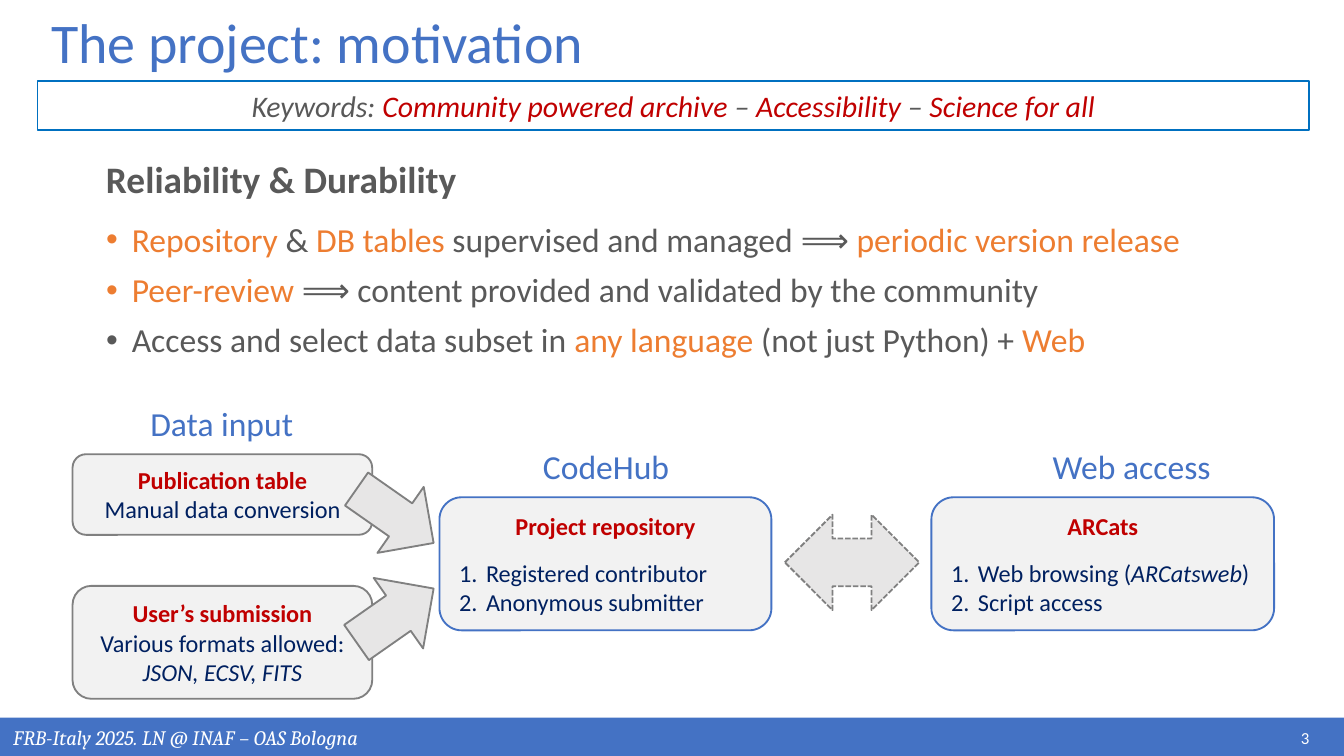
import pptx
import pptx.util
import pptx.dml.color
import pptx.enum.dml
import pptx.enum.shapes
import pptx.enum.text
import pptx.oxml
import pptx.oxml.ns

Inches, Pt = pptx.util.Inches, pptx.util.Pt
SHAPE = pptx.enum.shapes.MSO_SHAPE
ALIGN = pptx.enum.text.PP_ALIGN
ANCHOR = pptx.enum.text.MSO_ANCHOR

BLUE, NAVY, RED, ORANGE = "4472C4", "002060", "C00000", "ED7D31"
TEXT, GREY, PALE, ARROW, WHITE = "595959", "808080", "F2F2F2", "E7E6E6", "FFFFFF"


def color(value):
    return pptx.dml.color.RGBColor.from_string(value)


def place(shape, left, top, width, height):
    shape.left, shape.top = Inches(left), Inches(top)
    shape.width, shape.height = Inches(width), Inches(height)


def prepare(shape, anchor):
    frame = shape.text_frame
    frame.word_wrap = True
    frame.auto_size = pptx.enum.text.MSO_AUTO_SIZE.NONE
    frame.vertical_anchor = anchor
    return frame


def write(para, spans, size, align=ALIGN.LEFT, font="Calibri"):
    """Add runs given as (text, colour, style); style may hold b and i."""
    para.alignment = align
    for text, fill, style in spans:
        span = para.add_run()
        span.text = text
        span.font.name, span.font.size = font, Pt(size)
        span.font.bold, span.font.italic = "b" in style, "i" in style
        span.font.color.rgb = color(fill)


def set_bullet(para, indent, tag, **attributes):
    properties = para._p.get_or_add_pPr()
    properties.set("marL", str(Inches(indent)))
    properties.set("indent", str(-Inches(indent)))
    bullet = pptx.oxml.parse_xml(f'<a:{tag} {pptx.oxml.ns.nsdecls("a")}/>')
    for name, value in attributes.items():
        bullet.set(name, value)
    properties.append(bullet)


def add_figure(page, kind, left, top, width, height, fill=None, line=None):
    shape = page.shapes.add_shape(kind, 0, 0, 0, 0)
    place(shape, left, top, width, height)
    shape.shadow.inherit = False
    if fill:
        shape.fill.solid()
        shape.fill.fore_color.rgb = color(fill)
    else:
        shape.fill.background()
    if line:
        shape.line.color.rgb = color(line)
        shape.line.width = Pt(1)
    else:
        shape.line.fill.background()
    return shape


def add_label(page, left, top, width, height, spans, size,
              align=ALIGN.CENTER, anchor=ANCHOR.TOP):
    box = page.shapes.add_textbox(0, 0, 0, 0)
    place(box, left, top, width, height)
    para = prepare(box, anchor).paragraphs[0]
    write(para, spans, size, align)
    return para


def add_footer(page, left, top, width, height):
    bar = add_figure(page, SHAPE.RECTANGLE, left, top, width, height, BLUE)
    write(prepare(bar, ANCHOR.MIDDLE).paragraphs[0],
          [("FRB-Italy 2025. LN @ INAF – OAS Bologna", WHITE, "i")], 11, font="Cambria")
    add_label(page, left + width - 0.55, top + 0.05, 0.39, 0.2,
              [("3", WHITE, "")], 9, ALIGN.RIGHT, ANCHOR.MIDDLE)


def add_header(page, left, top, width):
    title = page.shapes.title
    place(title, left, top, width, 0.59)
    para = prepare(title, ANCHOR.TOP).paragraphs[0]
    para.line_spacing = 0.9
    write(para, [("The project: motivation", BLUE, "")], 30)

    # Keyword strip
    strip = add_figure(page, SHAPE.RECTANGLE, left, top + 0.54, width, 0.37, line="0070C0")
    write(prepare(strip, ANCHOR.TOP).paragraphs[0], [
        ("Keywords: ", TEXT, "i"), ("Community powered archive ", RED, "i"),
        ("– ", TEXT, "i"), ("Accessibility ", RED, "i"),
        ("–", TEXT, "i"), (" Science for all", RED, "i")], 16, ALIGN.CENTER)


def add_points(page, left, top, width):
    heading = add_label(page, left, top, 2.89, 0.4,
                        [("Reliability & Durability", TEXT, "b")], 20, ALIGN.LEFT)
    heading.line_spacing = 0.9
    heading.space_before = Pt(7.5)

    points = [
        [("Repository", ORANGE, ""), (" & ", TEXT, ""), ("DB tables", ORANGE, ""),
         (" supervised and managed ⟹ ", TEXT, ""), ("periodic version release", ORANGE, "")],
        [("Peer-review", ORANGE, ""),
         (" ⟹ content provided and validated by the community", TEXT, "")],
        [("Access and select data subset in ", TEXT, ""), ("any language", ORANGE, ""),
         (" (not just Python) + ", TEXT, ""), ("Web", ORANGE, "")],
    ]
    body = page.placeholders[1]
    place(body, left, top + 0.46, width, 1.14)
    frame = prepare(body, ANCHOR.TOP)
    for index, spans in enumerate(points):
        para = frame.add_paragraph() if index else frame.paragraphs[0]
        para.line_spacing = 0.9
        para.space_before = Pt(7.5)
        write(para, spans, 18)
        set_bullet(para, 0.19, "buChar", char="•")


def add_card(page, left, top, width, height, line, heading, lines, numbered=False):
    card = add_figure(page, SHAPE.ROUNDED_RECTANGLE, left, top, width, height, PALE, line)
    frame = prepare(card, ANCHOR.MIDDLE)
    write(frame.paragraphs[0], [(heading, RED, "b")], 13, ALIGN.CENTER)
    if numbered:
        frame.paragraphs[0].space_after = Pt(9.5)
    for spans in lines:
        para = frame.add_paragraph()
        write(para, [(text, NAVY, style) for text, style in spans], 13,
              ALIGN.LEFT if numbered else ALIGN.CENTER)
        if numbered:
            set_bullet(para, 0.2, "buAutoNum", type="arabicPeriod")


def add_workflow(page, left, top):
    def caption(x, y, text):
        add_label(page, left + x, top + y, 1.46, 0.4, [(text, BLUE, "")], 18)

    # Web access
    add_card(page, left + 6.39, top + 0.75, 2.55, 0.99, BLUE, "ARCats",
             [[("Web browsing (", ""), ("ARCatsweb", "i"), (")", "")],
              [("Script access", "")]], numbered=True)
    exchange = add_figure(page, SHAPE.LEFT_RIGHT_ARROW, left + 5.3, top + 0.88,
                          1, 0.71, ARROW, GREY)
    exchange.line.dash_style = pptx.enum.dml.MSO_LINE.SQUARE_DOT
    caption(7.15, 0.32, "Web access")

    # Data input, first source
    add_card(page, left, top + 0.43, 2.23, 0.6, GREY, "Publication table",
             [[("Manual data conversion", "")]])

    # Repository
    add_card(page, left + 2.73, top + 0.75, 2.47, 0.99, BLUE, "Project repository",
             [[("Registered contributor", "")], [("Anonymous submitter", "")]],
             numbered=True)
    caption(3.24, 0.32, "CodeHub")

    # Data input, second source and arrows to the repository
    add_card(page, left, top + 1.41, 2.23, 0.84, GREY, "User’s submission",
             [[("Various formats allowed:", "")], [("JSON, ECSV, FITS", "i")]])
    for y, height, angle in ((1.31, 0.64, 325), (0.59, 0.6, 35)):
        arrow = add_figure(page, SHAPE.RIGHT_ARROW, left + 2.05, top + y,
                           0.7, height, ARROW, GREY)
        arrow.rotation = angle
    caption(0.38, 0, "Data input")


def main():
    deck = pptx.Presentation()
    deck.slide_width = Inches(10)
    deck.slide_height = deck.slide_width * 9 // 16
    page = deck.slides.add_slide(deck.slide_layouts[1])
    add_footer(page, 0, 5.34, 10, 0.29)
    add_header(page, 0.28, 0.06, 9.46)
    add_points(page, 0.69, 1.15, 9.06)
    add_workflow(page, 0.54, 2.95)
    deck.save("out.pptx")


if __name__ == "__main__":
    main()
